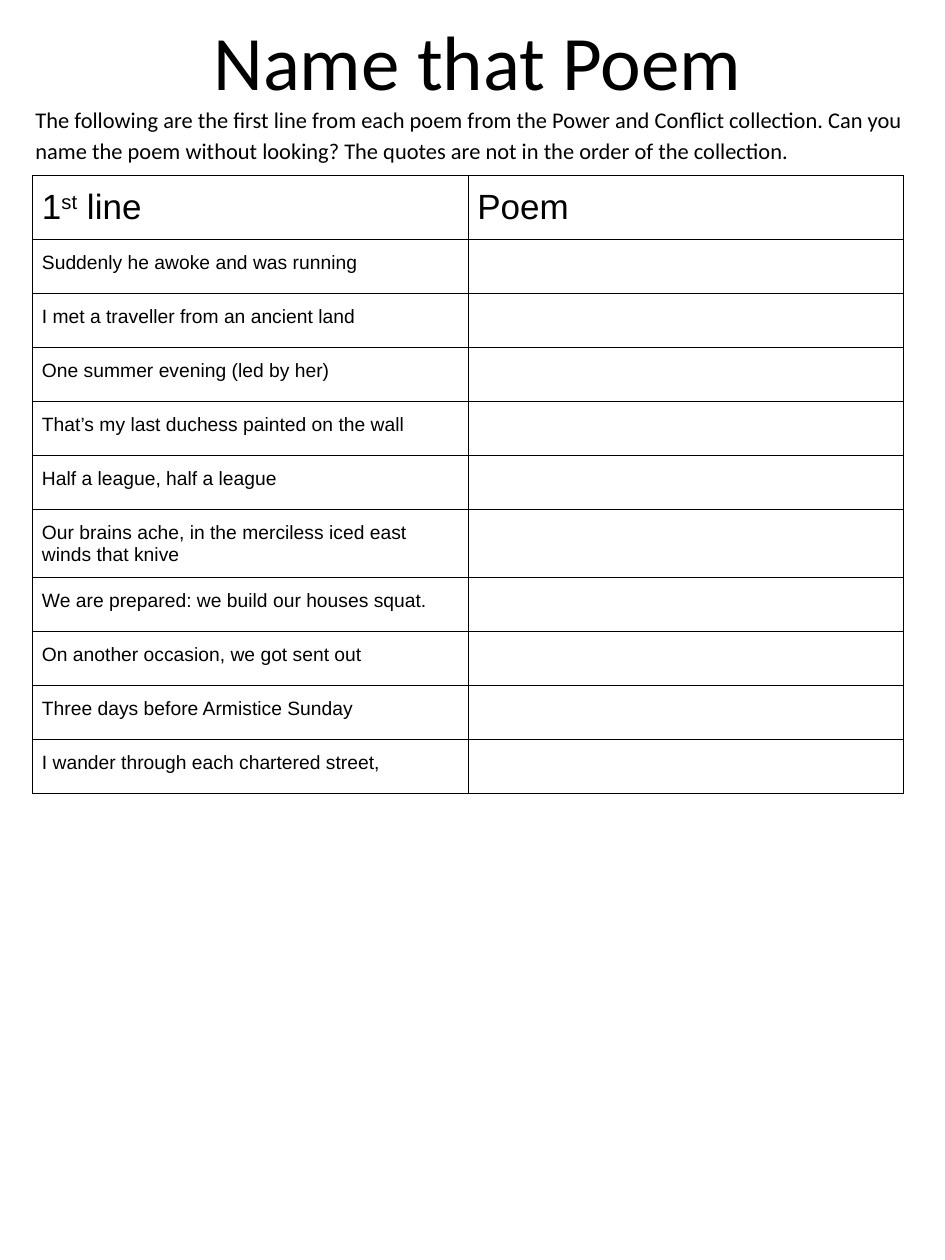
from pptx import Presentation
from pptx.dml.color import RGBColor
from pptx.enum.text import MSO_ANCHOR, MSO_AUTO_SIZE, PP_ALIGN
from pptx.oxml.ns import qn
from pptx.util import Pt
from lxml.etree import SubElement

INK = {"text": "000000", "line": "000000"}
LINES = [
    "Suddenly he awoke and was running",
    "I met a traveller from an ancient land",
    "One summer evening (led by her)",
    "That’s my last duchess painted on the wall",
    "Half a league, half a league",
    "Our brains ache, in the merciless iced east winds that knive",
    "We are prepared: we build our houses squat.",
    "On another occasion, we got sent out",
    "Three days before Armistice Sunday",
    "I wander through each chartered street,",
]


def write(para, text, font="Arial", size=11, raised=False):
    run = para.add_run()
    run.text = text
    run.font.name = font
    run.font.size = Pt(size)
    run.font.bold = False
    run.font.color.rgb = RGBColor.from_string(INK["text"])
    if raised:
        run.font._element.set("baseline", "30000")


def place(shape, box, anchor):
    shape.left, shape.top, shape.width, shape.height = map(Pt, box)
    frame = shape.text_frame
    frame.word_wrap = True
    frame.auto_size = MSO_AUTO_SIZE.NONE
    frame.vertical_anchor = anchor
    return frame.paragraphs[0]


def add_title(slide, box):
    para = place(slide.shapes.title, box, MSO_ANCHOR.MIDDLE)
    para.alignment = PP_ALIGN.CENTER
    write(para, "Name that Poem", font="Calibri", size=44)


def add_intro(slide, box):
    para = place(slide.placeholders[1], box, MSO_ANCHOR.TOP)
    para.line_spacing = 1.15
    para.space_before = Pt(12)
    props = para._p.get_or_add_pPr()
    props.set("marL", "0")
    props.set("indent", "0")
    SubElement(props, qn("a:buNone"))
    write(para, "The following are the first line from each poem from the Power "
          "and Conflict collection. Can you name the poem without looking? "
          "The quotes are not in the order of the collection.",
          font="Calibri", size=12.8)


def rule(cell):
    props = cell._tc.get_or_add_tcPr()
    for spot, side in enumerate(("lnL", "lnR", "lnT", "lnB")):
        line = props.makeelement(qn("a:" + side), {"w": str(Pt(0.75))})
        props.insert(spot, line)
        fill = SubElement(line, qn("a:solidFill"))
        SubElement(fill, qn("a:srgbClr"), val=INK["line"])


def set_cell(cell, parts, size):
    cell.fill.background()
    cell.margin_left = cell.margin_right = Pt(5.25)
    cell.margin_top = cell.margin_bottom = Pt(7.2)
    rule(cell)
    para = cell.text_frame.paragraphs[0]
    para.space_before = para.space_after = Pt(12)
    for text, raised in parts:
        write(para, text, size=size, raised=raised)
    if not parts:
        para._p.get_or_add_endParaRPr().set("sz", str(size * 100))


def add_quiz(slide, box, row=30.86, tall=39):
    left, top, width, height = map(Pt, box)
    frame = slide.shapes.add_table(len(LINES) + 1, 2, left, top, width, height)
    table = frame.table
    table.first_row = table.horz_banding = False
    for col in table.columns:
        col.width = width // 2
    head = [[("1", False), ("st", True), (" line", False)], [("Poem", False)]]
    rows = [head] + [[[(line, False)], []] for line in LINES]
    for i, cells in enumerate(rows):
        long = i and len(LINES[i - 1]) > 50
        table.rows[i].height = Pt(tall if long else row)
        for j, parts in enumerate(cells):
            set_cell(table.cell(i, j), parts, 11 if i else 20)


def main():
    deck = Presentation()
    deck.slide_width, deck.slide_height = Pt(540), Pt(720)
    slide = deck.slides.add_slide(deck.slide_layouts[1])
    add_title(slide, (30, -26, 486, 120))
    add_intro(slide, (13, 54.75, 513.5, 84))
    add_quiz(slide, (18.75, 100.25, 497.5, 348))
    deck.save("out.pptx")


if __name__ == "__main__":
    main()
